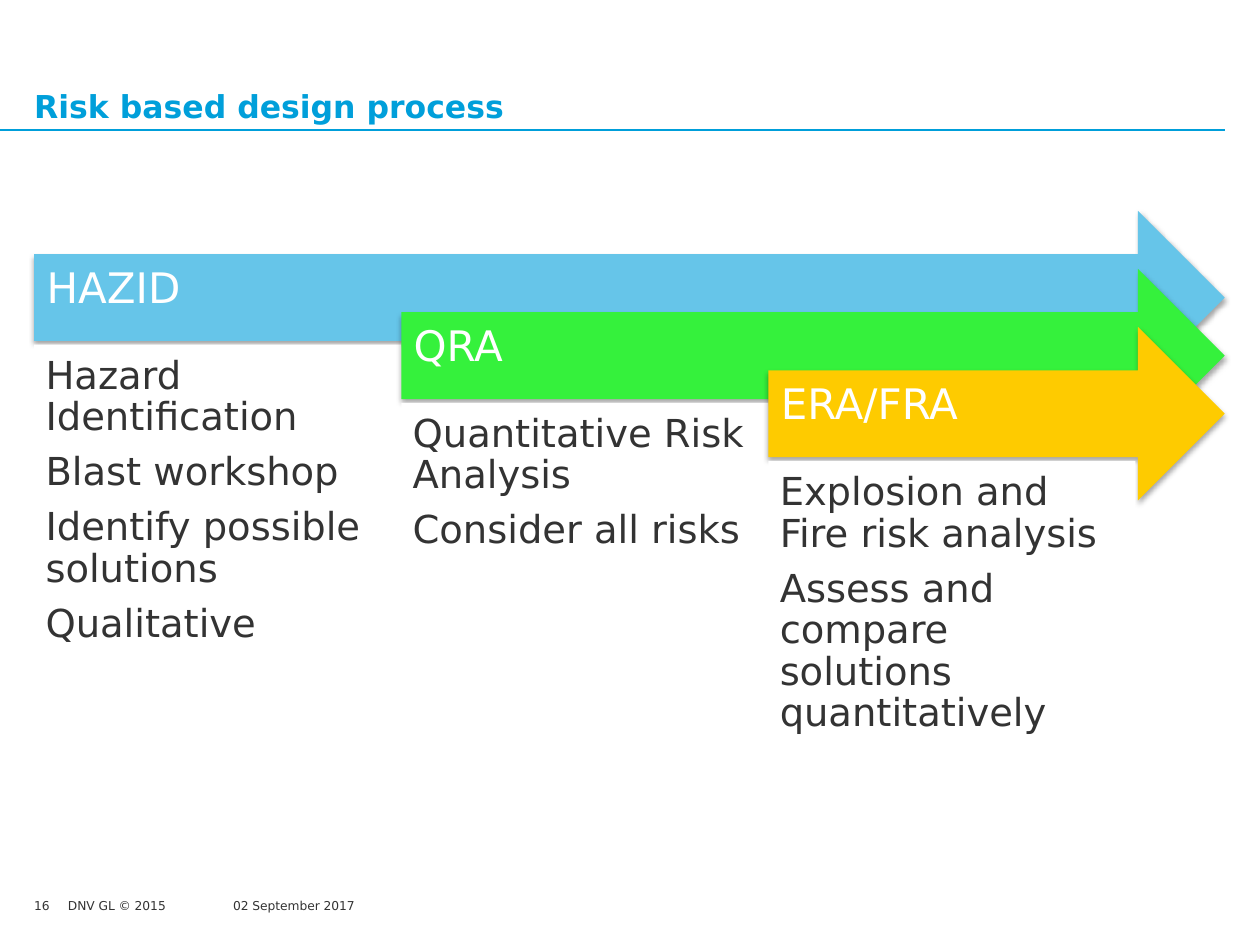
from lxml import etree
from pptx import Presentation
from pptx.dml.color import RGBColor
from pptx.enum.shapes import MSO_CONNECTOR, MSO_SHAPE
from pptx.enum.text import MSO_ANCHOR as ANCHOR, MSO_AUTO_SIZE as AUTO, PP_ALIGN as ALIGN
from pptx.oxml import parse_xml
from pptx.oxml.ns import nsdecls, qn
from pptx.util import Cm, Pt

FONT = "DejaVu Sans"
WHITE = RGBColor(0xFF, 0xFF, 0xFF)
DARK = RGBColor(0x33, 0x33, 0x33)
BLUE = RGBColor(0x00, 0x9F, 0xDA)
SKY = RGBColor(0x66, 0xC5, 0xE9)
GREEN = RGBColor(0x35, 0xF1, 0x3C)
YELLOW = RGBColor(0xFE, 0xCB, 0x00)

LEFT, WIDTH = 0.69, 24
STAGES = [
    ("HAZID", SKY, ["Hazard Identification", "Blast workshop",
                    "Identify possible solutions", "Qualitative"]),
    ("QRA", GREEN, ["Quantitative Risk Analysis", "Consider all risks"]),
    ("ERA/FRA", YELLOW, ["Explosion and Fire risk analysis",
                         "Assess and compare solutions quantitatively"]),
]
FOOTER = [(0, 0.66, "16"), (0.68, 2.6, "DNV GL © 2015"), (4.01, 7.8, "02 September 2017")]


def write(tf, lines, size, color, insets=(0, 0, 0, 0), anchor=ANCHOR.TOP, bold=False):
    tf.text = "\n".join(lines)
    tf.word_wrap = True
    tf.auto_size = AUTO.NONE
    tf.vertical_anchor = anchor
    tf.margin_left, tf.margin_top, tf.margin_right, tf.margin_bottom = map(Cm, insets)
    for p in tf.paragraphs:
        p.alignment = ALIGN.LEFT
        for r in p.runs:
            r.font.name, r.font.size, r.font.bold = FONT, Pt(size), bold
            r.font.color.rgb = color


def space_out(tf, size):
    for p in tf.paragraphs:
        p.line_spacing = 0.9
        p.space_after = Pt(0.35 * size)


def add_filled(shapes, kind, x, y, w, h, color):
    sp = shapes.add_shape(kind, Cm(x), Cm(y), Cm(w), Cm(h))
    sp.shadow.inherit = False
    sp.fill.solid()
    sp.fill.fore_color.rgb = color
    sp.line.fill.background()
    return sp


def add_soft_shadow(sp):
    effects = sp._element.spPr.find(qn("a:effectLst"))
    effects.append(parse_xml(
        f'<a:outerShdw {nsdecls("a")} blurRad="{Pt(3.1)}" dist="{Pt(1.8)}" dir="5400000" '
        'rotWithShape="0"><a:srgbClr val="000000"><a:alpha val="35000"/></a:srgbClr>'
        '</a:outerShdw>'))


def add_header(s, x, y, w, h):
    title = s.shapes.title
    title.left, title.top, title.width, title.height = Cm(x), Cm(y), Cm(w), Cm(h)
    write(title.text_frame, ["Risk based design process"], 18, BLUE,
          anchor=ANCHOR.BOTTOM, bold=True)
    rule_y = Cm(y + h + 0.11)
    rule = s.shapes.add_connector(MSO_CONNECTOR.STRAIGHT, 0, rule_y, Cm(x + w), rule_y)
    rule.line.color.rgb = BLUE
    rule.line.width = Pt(1)
    etree.SubElement(rule._element.spPr, qn("a:effectLst"))


def add_stage(shapes, x, y, w, col_w, name, color, points):
    arrow = add_filled(shapes, MSO_SHAPE.RIGHT_ARROW, x, y, w, 3.5, color)
    add_soft_shadow(arrow)
    write(arrow.text_frame, [name], 24, WHITE, (0.25, 0.25, 0.71, 0.56), ANCHOR.MIDDLE)
    space_out(arrow.text_frame, 24)
    card = add_filled(shapes, MSO_SHAPE.RECTANGLE, x, y + 2.7, col_w, 6.7, WHITE)
    write(card.text_frame, points, 22, DARK, (0.23,) * 4)
    space_out(card.text_frame, 22)


def add_process(s, x, y, w):
    col_w, drop = 7.4, 1.17
    group = s.shapes.add_group_shape()
    for i, stage in enumerate(STAGES):
        dx = i * col_w
        add_stage(group.shapes, x + dx, y + i * drop, w - dx, col_w, *stage)


def add_footer(s, x, y):
    for dx, w, text in FOOTER:
        tb = s.shapes.add_textbox(Cm(x + dx), Cm(y), Cm(w), Cm(0.5))
        write(tb.text_frame, [text], 7, DARK)


def main():
    prs = Presentation()
    prs.slide_width, prs.slide_height = Cm(25.4), Cm(19.05)
    s = prs.slides.add_slide(prs.slide_layouts[5])
    add_header(s, LEFT, 0.66, WIDTH, 1.85)
    add_process(s, LEFT, 4.25, WIDTH)
    add_footer(s, LEFT, 18.11)
    prs.save("out.pptx")


if __name__ == "__main__":
    main()
